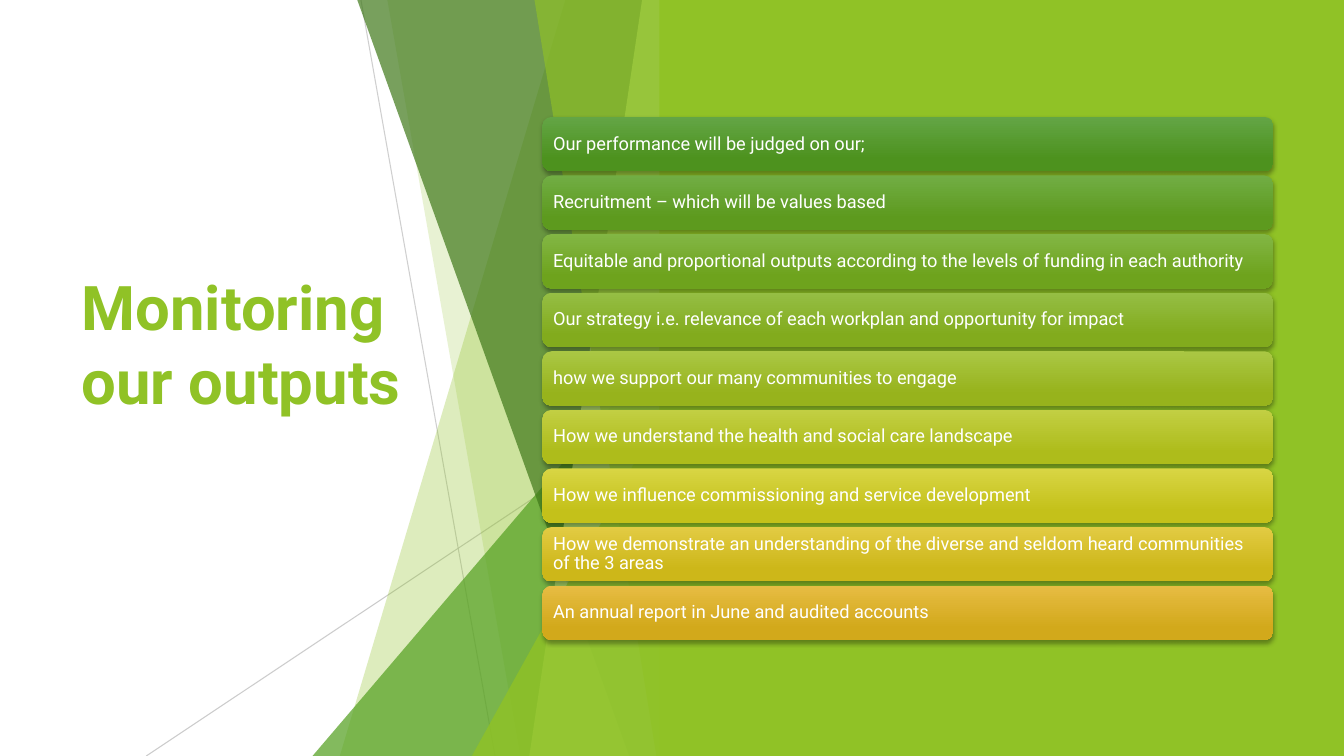
from lxml.etree import SubElement
from pptx import Presentation
from pptx.dml.color import RGBColor
from pptx.enum.shapes import MSO_CONNECTOR, MSO_SHAPE
from pptx.enum.text import MSO_ANCHOR, MSO_AUTO_SIZE, PP_ALIGN
from pptx.oxml.ns import qn
from pptx.util import Inches, Pt

FONT = "Roboto"
WHITE = RGBColor(0xFF, 0xFF, 0xFF)
GREY = RGBColor(0xBF, 0xBF, 0xBF)
LIME = RGBColor(0x90, 0xC2, 0x26)
PALE_LIME = RGBColor(0xC0, 0xE4, 0x74)
GREEN = RGBColor(0x54, 0xA0, 0x21)
DARK_GREEN = RGBColor(0x3F, 0x78, 0x19)

TITLE = "Monitoring our outputs"
# text, gradient top colour, gradient bottom colour
OUTPUTS = [
    ("Our performance will be judged on our;", "63A545", "4D921E"),
    ("Recruitment – which will be values based", "71AD44", "5D9A1E"),
    ("Equitable and proportional outputs according to the levels of funding in each authority",
     "82B644", "6EA31D"),
    ("Our strategy i.e. relevance of each workplan and opportunity for impact",
     "95BE44", "82AB1D"),
    ("how we support our many communities to engage", "AAC744", "97B31C"),
    ("How we understand the health and social care landscape", "C2CF43", "AEBC1B"),
    ("How we influence commissioning and service development", "D8D543", "C4C11A"),
    ("How we demonstrate an understanding of the diverse and seldom heard communities "
     "of the 3 areas", "E2CB43", "CDB719"),
    ("An annual report in June and audited accounts", "E7BC43", "D2A91B"),
]

SLIDE_W, SLIDE_H = 13.33, 7.5
FACET_RIGHT, FACET_TOP = 6.66, -0.01
# start, end, opacity
HAIRLINES = [((3.58, 0), (4.91, SLIDE_H), 75), ((6.66, 4.03), (1.45, SLIDE_H), 80)]
# kind, two measures, colour, opacity; back to front
# a band has its left edge's top x and bottom x, a wedge its left x and top y
FACETS = [
    ("band", 5.61, 3.37, LIME, 30),
    ("band", 3.84, 5.16, LIME, 20),
    ("wedge", 3.10, 3.33, GREEN, 72),
    ("band", 3.54, 6.24, DARK_GREEN, 70),
    ("band", 6.37, 5.25, PALE_LIME, 70),
    ("band", 5.30, 6.51, LIME, 65),
    ("wedge", 4.68, 3.93, LIME, 80),
]
PANEL_LEFT = 6.54
BAR_LEFT, BAR_W, BAR_H = 5.38, 7.25, 0.54
FIRST_BAR_TOP, LAST_BAR_TOP = 1.16, 5.81


def set_opacity(shape, percent):
    for colour in shape._element.spPr.iter(qn("a:srgbClr")):
        SubElement(colour, qn("a:alpha"), val=str(percent * 1000))


def paint(shape, colour):
    shape.shadow.inherit = False
    shape.fill.solid()
    shape.fill.fore_color.rgb = colour
    shape.line.fill.background()


def add_preset(shapes, preset, left, top, width, height):
    return shapes.add_shape(preset, Inches(left), Inches(top), Inches(width), Inches(height))


def add_hairline(shapes, start, end, opacity):
    hairline = shapes.add_connector(
        MSO_CONNECTOR.STRAIGHT, *(Inches(v) for v in (*start, *end)))
    hairline.line.color.rgb = GREY
    hairline.line.width = Pt(0.75)
    set_opacity(hairline, opacity)
    SubElement(hairline._element.spPr, qn("a:effectLst"))


def add_band(shapes, top_x, bottom_x):
    corners = [(top_x, FACET_TOP), (FACET_RIGHT, FACET_TOP),
               (FACET_RIGHT, SLIDE_H), (bottom_x, SLIDE_H)]
    start, *others = [(Inches(x), Inches(y)) for x, y in corners]
    outline = shapes.build_freeform(*start)
    outline.add_line_segments(others, close=True)
    return outline.convert_to_shape()


def add_wedge(shapes, left, top):
    wedge = add_preset(shapes, MSO_SHAPE.ISOSCELES_TRIANGLE,
                       left, top, FACET_RIGHT - left, SLIDE_H - top)
    wedge.adjustments[0] = 1
    return wedge


def add_soft_shadow(shape):
    shape.shadow.inherit = False
    effects = shape._element.spPr.find(qn("a:effectLst"))
    shadow = SubElement(effects, qn("a:outerShdw"), blurRad=str(Pt(3)), dist=str(Pt(2)),
                        dir="5400000", rotWithShape="0")
    colour = SubElement(shadow, qn("a:srgbClr"), val="000000")
    SubElement(colour, qn("a:alpha"), val="35000")


def write(frame, text, size, colour, bold=False):
    frame.word_wrap = True
    frame.auto_size = MSO_AUTO_SIZE.NONE
    frame.vertical_anchor = MSO_ANCHOR.MIDDLE
    paragraph = frame.paragraphs[0]
    paragraph.alignment = PP_ALIGN.LEFT
    run = paragraph.add_run()
    run.text = text
    run.font.name = FONT
    run.font.size = Pt(size)
    run.font.bold = bold
    run.font.color.rgb = colour
    return paragraph


def add_bar(shapes, top, text, top_colour, bottom_colour):
    bar = add_preset(shapes, MSO_SHAPE.ROUNDED_RECTANGLE, BAR_LEFT, top, BAR_W, BAR_H)
    bar.line.fill.background()
    bar.fill.gradient()
    bar.fill.gradient_angle = 270
    stops = zip(bar.fill.gradient_stops, (0, 0.78), (top_colour, bottom_colour))
    for stop, position, colour in stops:
        stop.position = position
        stop.color.rgb = RGBColor.from_string(colour)
    add_soft_shadow(bar)
    frame = bar.text_frame
    frame.margin_left = frame.margin_right = Inches(0.08)
    frame.margin_top = frame.margin_bottom = Inches(0.05)
    write(frame, text, 13, WHITE).line_spacing = 0.9


def main():
    deck = Presentation()
    deck.slide_width, deck.slide_height = Inches(SLIDE_W), Inches(SLIDE_H)
    slide = deck.slides.add_slide(deck.slide_layouts[5])
    shapes = slide.shapes

    title = shapes.title
    title.left, title.top = Inches(0.71), Inches(1.51)
    title.width, title.height = Inches(3.88), Inches(3.78)
    write(title.text_frame, TITLE, 44, LIME, bold=True)

    for hairline in HAIRLINES:
        add_hairline(shapes, *hairline)
    add_facet = {"band": add_band, "wedge": add_wedge}
    for kind, first, second, colour, opacity in FACETS:
        facet = add_facet[kind](shapes, first, second)
        paint(facet, colour)
        set_opacity(facet, opacity)
    panel = add_preset(shapes, MSO_SHAPE.RECTANGLE,
                       PANEL_LEFT, 0, SLIDE_W - PANEL_LEFT, SLIDE_H)
    paint(panel, LIME)

    pitch = (LAST_BAR_TOP - FIRST_BAR_TOP) / (len(OUTPUTS) - 1)
    for row, output in enumerate(OUTPUTS):
        add_bar(shapes, FIRST_BAR_TOP + row * pitch, *output)

    deck.save("out.pptx")


if __name__ == "__main__":
    main()
